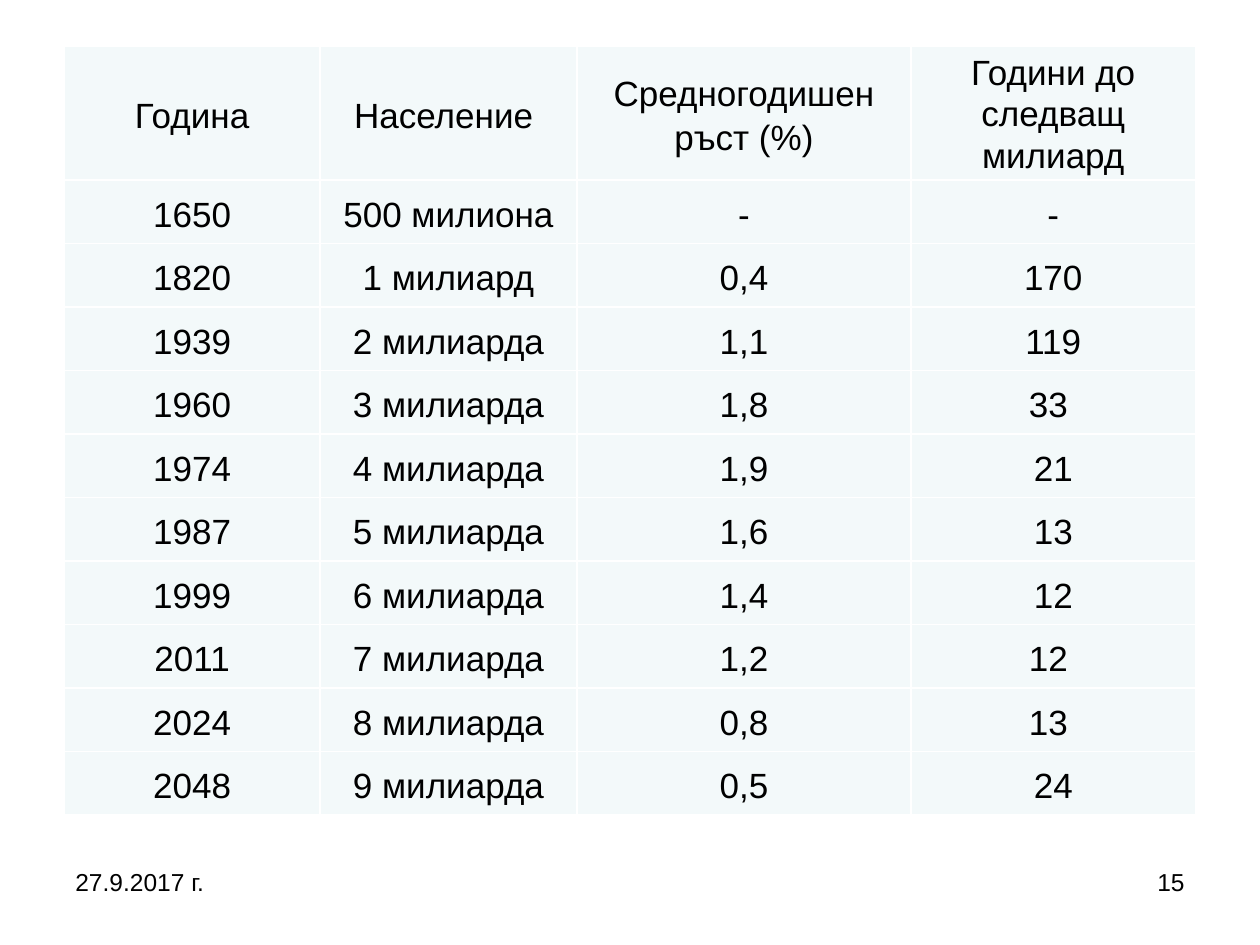
from dataclasses import dataclass

from lxml.etree import SubElement
from pptx import Presentation
from pptx.dml.color import RGBColor
from pptx.enum.text import MSO_ANCHOR, PP_ALIGN
from pptx.oxml.ns import qn
from pptx.util import Inches, Pt

COLORS = {"text": "000000", "cell": "F3F9FA", "rule": "FFFFFF"}
COLS = [2.03, 2.04, 2.65, 2.26]
HEAD_H, ROW_H = 0.94, 0.504
HEADS = ["Година", "Население ", "Средногодишен ръст (%)",
         "Години до следващ милиард"]


@dataclass
class Stage:
    year: str
    people: str
    growth: str
    wait: str


@dataclass
class Note:
    text: str
    left: float
    align: PP_ALIGN


STAGES = [
    Stage("1650", "500 милиона", "-", "-"),
    Stage("1820", "1 милиард", "0,4", "170"),
    Stage("1939", "2 милиарда", "1,1", "119"),
    Stage("1960", "3 милиарда", "1,8", "33 "),
    Stage("1974", "4 милиарда", "1,9", "21"),
    Stage("1987", "5 милиарда", "1,6", "13"),
    Stage("1999", "6 милиарда", "1,4", "12"),
    Stage("2011", "7 милиарда", "1,2", "12 "),
    Stage("2024", "8 милиарда", "0,8", "13 "),
    Stage("2048", "9 милиарда", "0,5", "24"),
]
NOTES = [Note("27.9.2017 г.", 0.5, PP_ALIGN.LEFT),
         Note("15", 7.17, PP_ALIGN.RIGHT)]


def write(frame, text: str, *, size: int, align: PP_ALIGN,
          space: float = 1.0) -> None:
    frame.word_wrap = True
    para = frame.paragraphs[0]
    para.alignment, para.line_spacing = align, space
    run = para.add_run()
    run.text = text
    run.font.size, run.font.name = Pt(size), "Arial"
    run.font.color.rgb = RGBColor.from_string(COLORS["text"])


def rule(cell) -> None:
    """Draw a thin line on each side of a cell."""
    props = cell._tc.get_or_add_tcPr()
    for i, side in enumerate(("lnL", "lnR", "lnT", "lnB")):
        line = SubElement(props, qn(f"a:{side}"), w=str(Pt(1)))
        fill = SubElement(line, qn("a:solidFill"))
        SubElement(fill, qn("a:srgbClr"), val=COLORS["rule"])
        # Lines come before the fill in the cell's properties
        props.insert(i, line)


def draw_cell(cell, text: str) -> None:
    cell.fill.solid()
    cell.fill.fore_color.rgb = RGBColor.from_string(COLORS["cell"])
    cell.vertical_anchor = MSO_ANCHOR.MIDDLE
    cell.margin_left = cell.margin_right = Inches(0.07)
    cell.margin_top = cell.margin_bottom = 0
    # The three-line heading is set tighter to keep its row low
    space = 1.06 if text == HEADS[-1] else 1.15
    write(cell.text_frame, text, size=20, align=PP_ALIGN.CENTER, space=space)
    rule(cell)


def draw_table(slide) -> None:
    rows = [HEADS] + [[s.year, s.people, s.growth, s.wait] for s in STAGES]
    high = HEAD_H + ROW_H * len(STAGES)
    table = slide.shapes.add_table(
        len(rows), len(COLS), Inches(0.51), Inches(0.37),
        Inches(sum(COLS)), Inches(high)).table
    table.horz_banding = False
    table.first_row = False
    for col, wide in zip(table.columns, COLS):
        col.width = Inches(wide)
    for r, texts in enumerate(rows):
        table.rows[r].height = Inches(ROW_H if r else HEAD_H)
        for c, text in enumerate(texts):
            draw_cell(table.cell(r, c), text)


def draw_note(slide, note: Note) -> None:
    box = slide.shapes.add_textbox(Inches(note.left), Inches(6.83),
                                   Inches(2.33), Inches(0.52))
    write(box.text_frame, note.text, size=14, align=note.align)


def main() -> None:
    deck = Presentation()
    deck.slide_width, deck.slide_height = Inches(10), Inches(7.5)
    slide = deck.slides.add_slide(deck.slide_layouts[6])

    # Date and page number
    for note in NOTES:
        draw_note(slide, note)

    # Population table
    draw_table(slide)
    deck.save("out.pptx")


if __name__ == "__main__":
    main()
